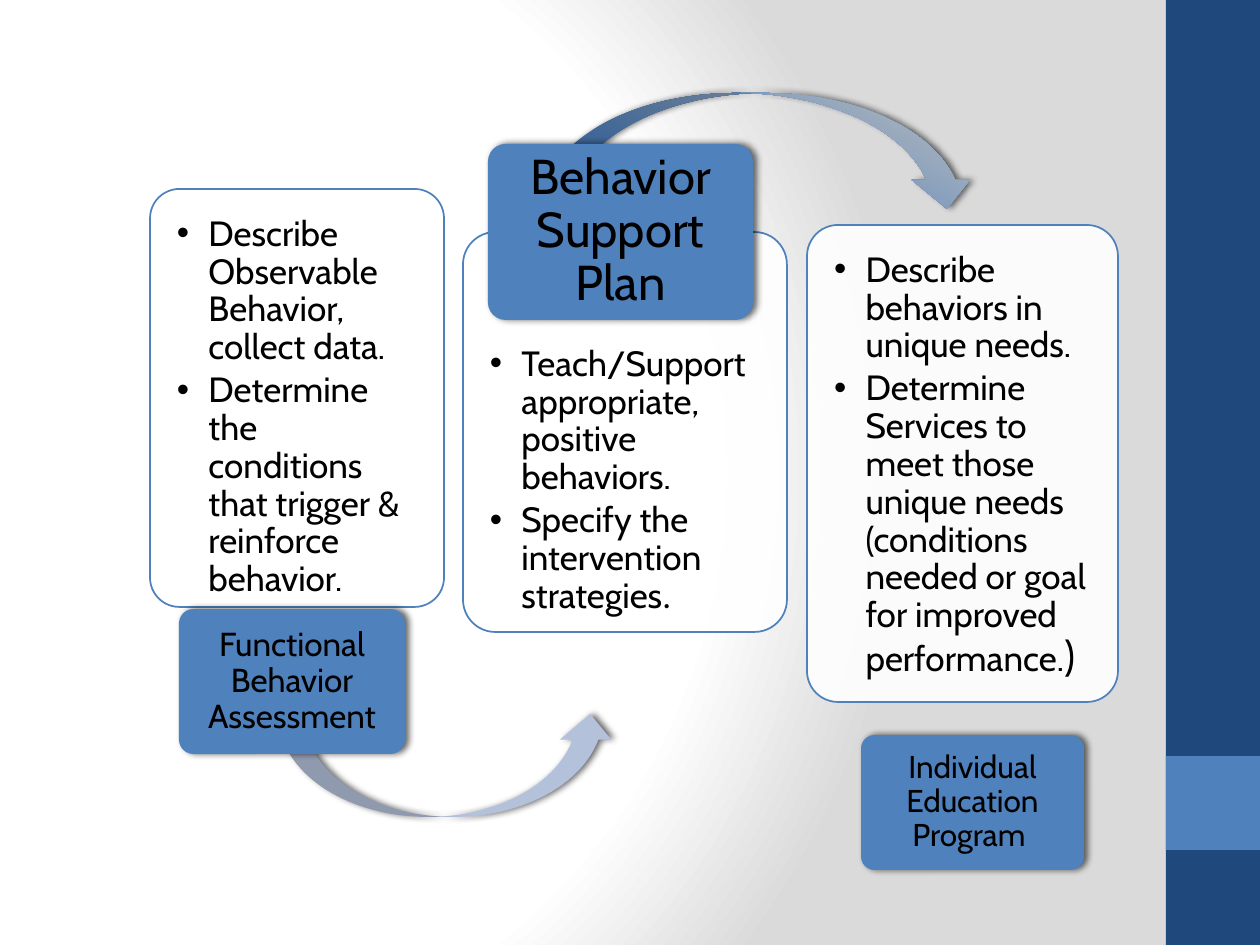
from dataclasses import dataclass

from lxml import etree
from pptx import Presentation
from pptx import util as u
from pptx.dml.color import RGBColor
from pptx.enum import shapes, text
from pptx.oxml import parse_xml
from pptx.oxml.ns import nsdecls, qn


@dataclass(frozen=True)
class Theme:
    font: str = "Cabin"
    alt_font: str = "Calibri"
    ink: str = "000000"
    white: str = "FFFFFF"
    grey: str = "DADADA"
    navy: str = "1F497D"
    blue: str = "4F81BD"
    pale: str = "B3C1DB"
    silver: str = "BDBDBD"
    body: int = 20
    large: int = 24


THEME = Theme()
PX = 914400 / 126
SIZE = (1260, 945)
BANDS = [
    ((1166, 0, 94, 945), THEME.navy),
    ((1166, 756, 94, 94), THEME.blue),
]
STAGES = [
    {
        "heading": "Functional Behavior Assessment",
        "heading_size": 19,
        "label": (179, 609, 226, 145),
        "margins": (5, 4),
        "card": (150, 189, 294, 418),
        "list": (159, 198, 276, 311),
        "slots": (1, 2),
        "points": [
            [("Describe Observable Behavior, collect data.", {})],
            [("Determine the conditions that trigger & reinforce behavior.", {})],
        ],
        "arrow": ("CURVED_UP_ARROW", (278, 714, 338, 103), [(0, THEME.pale), (100, THEME.pale)]),
    },
    {
        "heading": "Behavior Support Plan",
        "heading_size": 28,
        "label": (488, 144, 265, 176),
        "margins": (7, 5),
        "card": (463, 232, 324, 400),
        "list": (472, 328, 305, 296),
        "slots": (0, None),
        "points": [
            [("Teach/Support appropriate, positive behaviors.", {})],
            [("Specify the intervention strategies", {}), (".", {"font": THEME.alt_font})],
        ],
        "arrow": ("CURVED_DOWN_ARROW", (540, 93, 436, 116), [(28, THEME.blue), (100, THEME.silver)]),
    },
    {
        "heading": "Individual Education Program ",
        "heading_size": 18,
        "label": (861, 735, 223, 135),
        "margins": (5, 4),
        "card": (807, 225, 311, 477),
        "list": (816, 234, 293, 357),
        "slots": (3, 4),
        "points": [
            [("Describe behaviors in unique needs.", {})],
            [
                ("Determine Services to meet those unique needs "
                 "(conditions needed or goal for improved performance.", {}),
                (")", {"size": THEME.large}),
            ],
        ],
        "arrow": None,
    },
]


def emu(px):
    return u.Emu(round(px * PX))


def place(box, area):
    box.left, box.top, box.width, box.height = map(emu, area)


def gradient(stops, direction):
    marks = "".join(
        f'<a:gs pos="{pos * 1000}"><a:srgbClr val="{color}"/></a:gs>' for pos, color in stops
    )
    return parse_xml(
        f'<a:gradFill {nsdecls("a")} rotWithShape="1"><a:gsLst>{marks}</a:gsLst>{direction}</a:gradFill>'
    )


def replace_gradient(element, stops, direction):
    old = element.find(".//" + qn("a:gradFill"))
    old.getparent().replace(old, gradient(stops, direction))


def add_panel(page, kind, area, color):
    box = page.shapes.add_shape(getattr(shapes.MSO_SHAPE, kind), *map(emu, area))
    box.shadow.inherit = False
    box.fill.solid()
    box.fill.fore_color.rgb = RGBColor.from_string(color)
    box.line.fill.background()
    if kind == "ROUNDED_RECTANGLE":
        box.adjustments[0] = 0.1
    return box


def cast_shadow(box):
    effects = box.element.spPr.find(qn("a:effectLst"))
    effects.append(parse_xml(
        f'<a:outerShdw {nsdecls("a")} blurRad="{u.Pt(4)}" dist="{u.Pt(2)}" dir="0" rotWithShape="0">'
        f'<a:srgbClr val="{THEME.ink}"><a:alpha val="60000"/></a:srgbClr></a:outerShdw>'
    ))


def add_card(page, area):
    card = add_panel(page, "ROUNDED_RECTANGLE", area, THEME.white)
    card.line.color.rgb = RGBColor.from_string(THEME.blue)
    card.line.width = u.Pt(1)
    color = card.element.spPr.find(qn("a:solidFill"))[0]
    etree.SubElement(color, qn("a:alpha"), val="90000")


def add_arrow(page, kind, area, stops):
    arrow = add_panel(page, kind, area, stops[0][1])
    if stops[0][1] != stops[1][1]:
        arrow.fill.gradient()
        replace_gradient(arrow.element, stops, '<a:lin ang="18000000" scaled="0"/>')
    cast_shadow(arrow)


def text_frame(page, slots, slot, area, margins, anchor):
    if slot is None:
        box = page.shapes.add_textbox(0, 0, 0, 0)
    else:
        box = slots[slot]
        box.element.getparent().append(box.element)
    place(box, area)
    frame = box.text_frame
    frame.word_wrap = True
    frame.auto_size = text.MSO_AUTO_SIZE.NONE
    frame.vertical_anchor = anchor
    frame.margin_left = frame.margin_right = emu(margins[0])
    frame.margin_top = frame.margin_bottom = emu(margins[1])
    return frame


def write(para, spans, size, align):
    para.alignment = align
    para.line_spacing = 0.9
    para.space_before = u.Pt(0)
    para.space_after = u.Pt(size * 0.15)
    for words, style in spans:
        span = para.add_run()
        span.text = words
        span.font.name = style.get("font", THEME.font)
        span.font.size = u.Pt(style.get("size", size))
        span.font.bold = False
        span.font.color.rgb = RGBColor.from_string(THEME.ink)


def add_bullet(para):
    props = para._p.get_or_add_pPr()
    props.set("marL", str(u.Inches(0.25)))
    props.set("indent", str(-u.Inches(0.25)))
    etree.SubElement(props, qn("a:buFont"), typeface="Arial")
    etree.SubElement(props, qn("a:buChar"), char="•")


def add_list(page, slots, stage):
    frame = text_frame(page, slots, stage["slots"][1], stage["list"], (18, 18), text.MSO_ANCHOR.TOP)
    for index, spans in enumerate(stage["points"]):
        para = frame.add_paragraph() if index else frame.paragraphs[0]
        write(para, spans, THEME.body, text.PP_ALIGN.LEFT)
        add_bullet(para)


def add_heading(page, slots, stage):
    cast_shadow(add_panel(page, "ROUNDED_RECTANGLE", stage["label"], THEME.blue))
    left, top, width, height = stage["label"]
    inner = (left + 4, top + 4, width - 8, height - 8)
    frame = text_frame(page, slots, stage["slots"][0], inner, stage["margins"], text.MSO_ANCHOR.MIDDLE)
    write(frame.paragraphs[0], [(stage["heading"], {})], stage["heading_size"], text.PP_ALIGN.CENTER)


def main():
    deck = Presentation()
    deck.slide_width, deck.slide_height = map(emu, SIZE)
    page = deck.slides.add_slide(deck.slide_layouts.get_by_name("Comparison"))
    slots = {box.placeholder_format.idx: box for box in page.placeholders}
    page.background.fill.gradient()
    replace_gradient(
        page.element,
        [(0, THEME.white), (75, THEME.white), (100, THEME.grey)],
        '<a:path path="circle"><a:fillToRect l="20000" t="50000" r="100000" b="50000"/></a:path>',
    )
    for area, color in BANDS:
        add_panel(page, "RECTANGLE", area, color)
    for stage in STAGES:
        add_card(page, stage["card"])
        add_list(page, slots, stage)
        if stage["arrow"]:
            add_arrow(page, *stage["arrow"])
        add_heading(page, slots, stage)
    deck.save("out.pptx")


if __name__ == "__main__":
    main()
